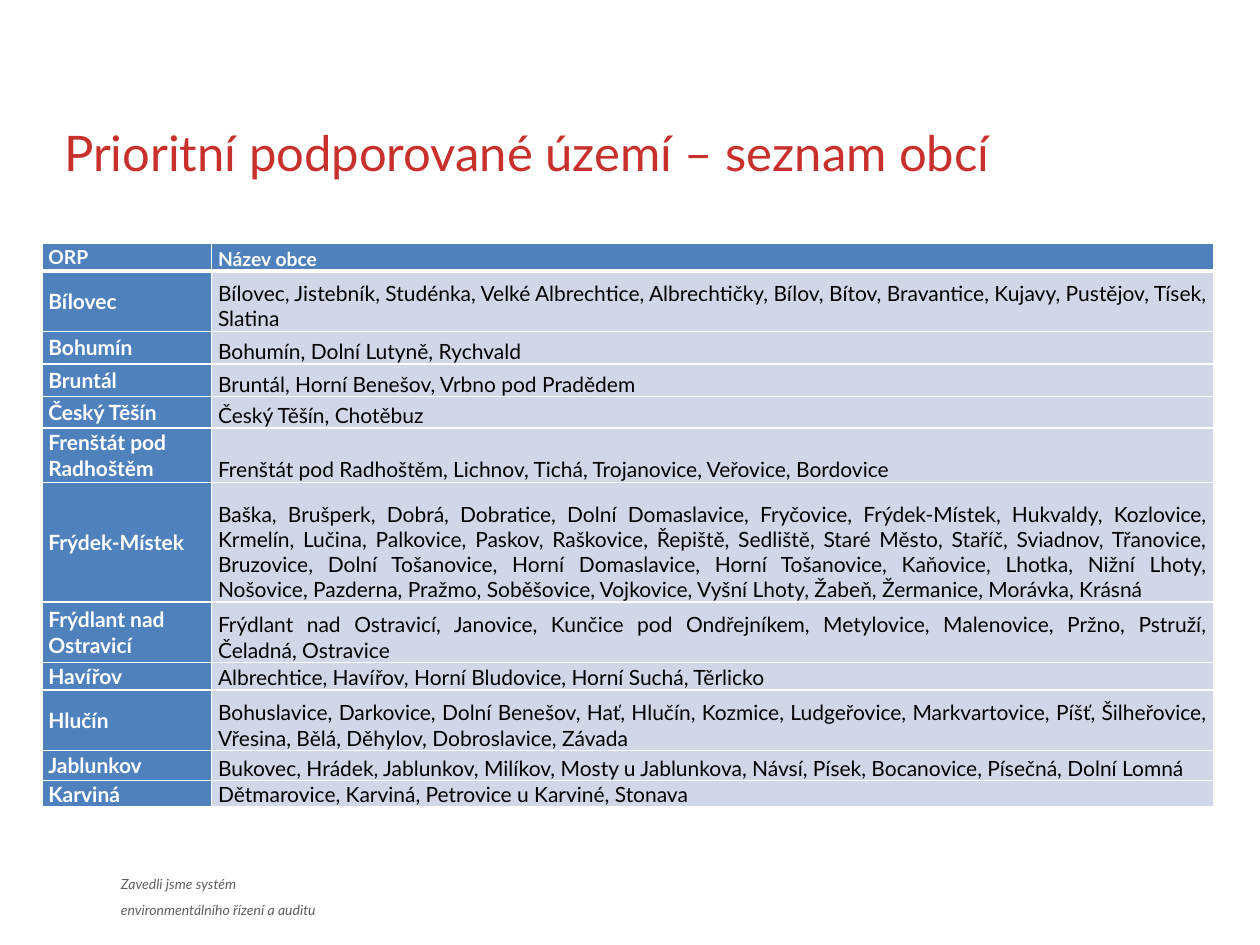
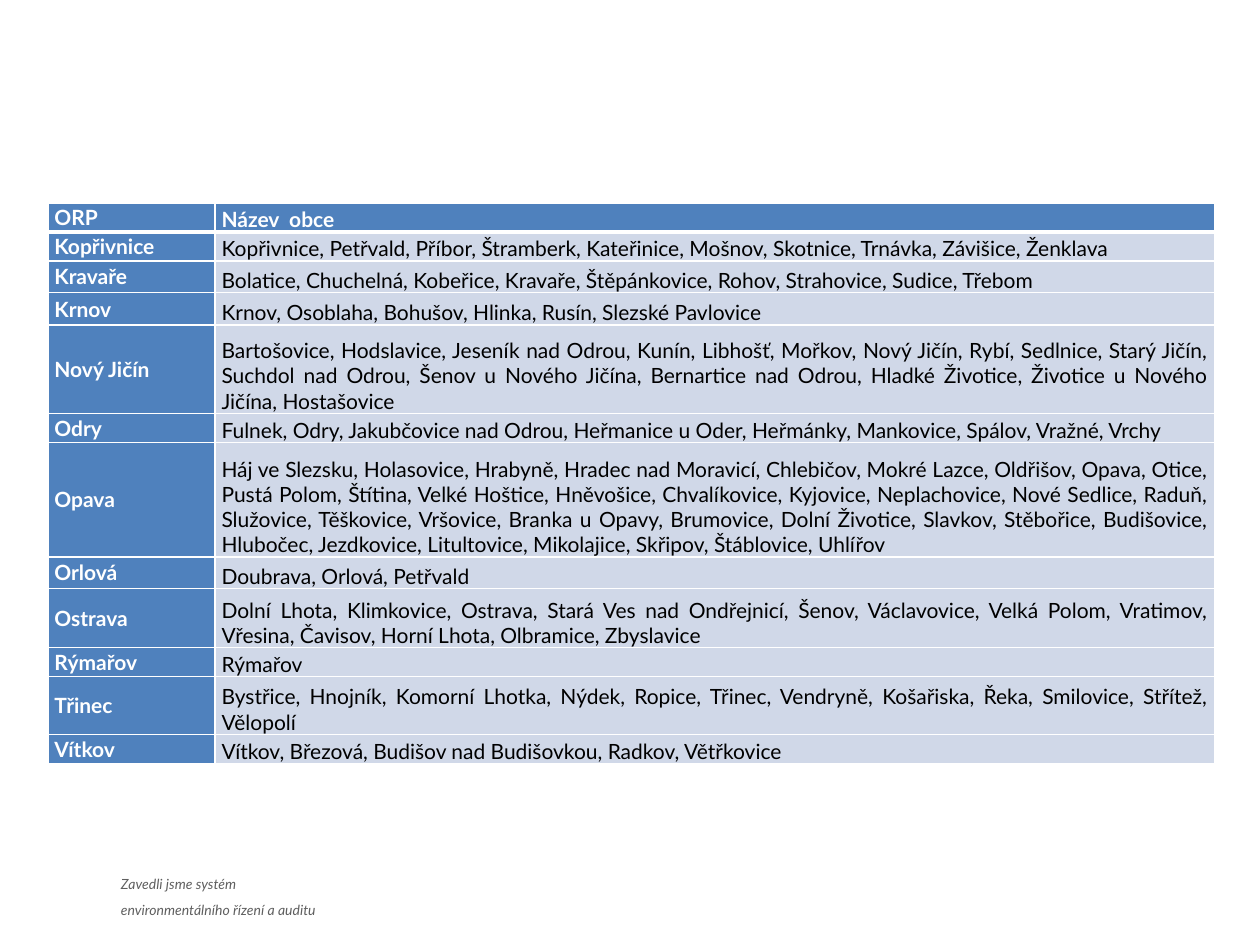
from lxml import etree
from pptx import Presentation
from pptx.dml.color import RGBColor
from pptx.enum.text import MSO_ANCHOR as ANCHOR, PP_ALIGN as ALIGN
from pptx.oxml.ns import qn
from pptx.util import Pt

FONT = "Lato"
RED, BLUE, PALE = "C8302C", "4F81BD", "D0D8E8"
WHITE, BLACK, GREY = "FFFFFF", "000000", "5F5F5F"
FOOTER = ["Zavedli jsme systém", "environmentálního řízení a auditu"]

# Each row: height, district, municipalities
DISTRICTS_B_K = [
    (34.5, "Bílovec",
     "Bílovec, Jistebník, Studénka, Velké Albrechtice, Albrechtičky, Bílov, Bítov, "
     "Bravantice, Kujavy, Pustějov, Tísek, Slatina"),
    (18.7, "Bohumín", "Bohumín, Dolní Lutyně, Rychvald"),
    (18.7, "Bruntál", "Bruntál, Horní Benešov, Vrbno pod Pradědem"),
    (18, "Český Těšín", "Český Těšín, Chotěbuz"),
    (31, "Frenštát pod Radhoštěm",
     "Frenštát pod Radhoštěm, Lichnov, Tichá, Trojanovice, Veřovice, Bordovice"),
    (68.4, "Frýdek-Místek",
     "Baška, Brušperk, Dobrá, Dobratice, Dolní Domaslavice, Fryčovice, Frýdek-Místek, "
     "Hukvaldy, Kozlovice, Krmelín, Lučina, Palkovice, Paskov, Raškovice, Řepiště, "
     "Sedliště, Staré Město, Staříč, Sviadnov, Třanovice, Bruzovice, Dolní Tošanovice, "
     "Horní Domaslavice, Horní Tošanovice, Kaňovice, Lhotka, Nižní Lhoty, Nošovice, "
     "Pazderna, Pražmo, Soběšovice, Vojkovice, Vyšní Lhoty, Žabeň, Žermanice, Morávka, "
     "Krásná"),
    (34.5, "Frýdlant nad Ostravicí",
     "Frýdlant nad Ostravicí, Janovice, Kunčice pod Ondřejníkem, Metylovice, Malenovice, "
     "Pržno, Pstruží, Čeladná, Ostravice"),
    (15.8, "Havířov", "Albrechtice, Havířov, Horní Bludovice, Horní Suchá, Těrlicko"),
    (34.5, "Hlučín",
     "Bohuslavice, Darkovice, Dolní Benešov, Hať, Hlučín, Kozmice, Ludgeřovice, "
     "Markvartovice, Píšť, Šilheřovice, Vřesina, Bělá, Děhylov, Dobroslavice, Závada"),
    (17.3, "Jablunkov",
     "Bukovec, Hrádek, Jablunkov, Milíkov, Mosty u Jablunkova, Návsí, Písek, Bocanovice, "
     "Písečná, Dolní Lomná"),
    (15.1, "Karviná", "Dětmarovice, Karviná, Petrovice u Karviné, Stonava"),
]
DISTRICTS_K_V = [
    (16.6, "Kopřivnice",
     "Kopřivnice, Petřvald, Příbor, Štramberk, Kateřinice, Mošnov, Skotnice, Trnávka, "
     "Závišice, Ženklava"),
    (18, "Kravaře",
     "Bolatice, Chuchelná, Kobeřice, Kravaře, Štěpánkovice, Rohov, Strahovice, Sudice, "
     "Třebom"),
    (18.7, "Krnov", "Krnov, Osoblaha, Bohušov, Hlinka, Rusín, Slezské Pavlovice"),
    (50.4, "Nový Jičín",
     "Bartošovice, Hodslavice, Jeseník nad Odrou, Kunín, Libhošť, Mořkov, Nový Jičín, "
     "Rybí, Sedlnice, Starý Jičín, Suchdol nad Odrou, Šenov u Nového Jičína, Bernartice "
     "nad Odrou, Hladké Životice, Životice u Nového Jičína, Hostašovice"),
    (16.6, "Odry",
     "Fulnek, Odry, Jakubčovice nad Odrou, Heřmanice u Oder, Heřmánky, Mankovice, "
     "Spálov, Vražné, Vrchy"),
    (65.5, "Opava",
     "Háj ve Slezsku, Holasovice, Hrabyně, Hradec nad Moravicí, Chlebičov, Mokré Lazce, "
     "Oldřišov, Opava, Otice, Pustá Polom, Štítina, Velké Hoštice, Hněvošice, "
     "Chvalíkovice, Kyjovice, Neplachovice, Nové Sedlice, Raduň, Služovice, Těškovice, "
     "Vršovice, Branka u Opavy, Brumovice, Dolní Životice, Slavkov, Stěbořice, "
     "Budišovice, Hlubočec, Jezdkovice, Litultovice, Mikolajice, Skřipov, Štáblovice, "
     "Uhlířov"),
    (18, "Orlová", "Doubrava, Orlová, Petřvald"),
    (33.8, "Ostrava",
     "Dolní Lhota, Klimkovice, Ostrava, Stará Ves nad Ondřejnicí, Šenov, Václavovice, "
     "Velká Polom, Vratimov, Vřesina, Čavisov, Horní Lhota, Olbramice, Zbyslavice"),
    (16.6, "Rýmařov", "Rýmařov"),
    (33.1, "Třinec",
     "Bystřice, Hnojník, Komorní Lhotka, Nýdek, Ropice, Třinec, Vendryně, Košařiska, "
     "Řeka, Smilovice, Střítež, Vělopolí"),
    (16.6, "Vítkov", "Vítkov, Březová, Budišov nad Budišovkou, Radkov, Větřkovice"),
]


def rgb(value):
    return RGBColor.from_string(value)


def add_run(p, text, size, color, bold=False, italic=False):
    r = p.add_run()
    r.text = text
    r.font.name, r.font.size = FONT, Pt(size)
    r.font.bold, r.font.italic = bold, italic
    r.font.color.rgb = rgb(color)


def add_title(slide, text):
    sp = slide.shapes.title
    sp.left, sp.top, sp.width, sp.height = Pt(29.5), Pt(65), Pt(665), Pt(44)
    tf = sp.text_frame
    tf.vertical_anchor = ANCHOR.MIDDLE
    p = tf.paragraphs[0]
    p.alignment = ALIGN.LEFT
    add_run(p, text, 28, RED)


def add_footer(slide):
    tf = slide.shapes.add_textbox(Pt(62), Pt(495.4), Pt(136), Pt(29.5)).text_frame
    tf.word_wrap = True
    for i, line in enumerate(FOOTER):
        p = tf.add_paragraph() if i else tf.paragraphs[0]
        p.alignment, p.line_spacing = ALIGN.JUSTIFY, 1.15
        p.space_before = Pt(4 if i else 0)
        add_run(p, line, 8, GREY, italic=True)


def set_borders(cell, top, bottom):
    tc_pr = cell._tc.get_or_add_tcPr()
    for side, width in (("L", 1), ("R", 1), ("T", top), ("B", bottom)):
        ln = etree.SubElement(tc_pr, qn(f"a:ln{side}"), w=str(Pt(width)))
        fill = etree.SubElement(ln, qn("a:solidFill"))
        etree.SubElement(fill, qn("a:srgbClr"), val=WHITE)


def fill_cell(cell, text, size, is_header, is_label):
    strong = is_header or is_label
    cell.margin_left = cell.margin_right = Pt(3.6)
    cell.margin_top = cell.margin_bottom = 0
    cell.vertical_anchor = ANCHOR.MIDDLE if is_label else ANCHOR.BOTTOM
    cell.fill.solid()
    cell.fill.fore_color.rgb = rgb(BLUE if strong else PALE)
    p = cell.text_frame.paragraphs[0]
    p.alignment = ALIGN.LEFT if is_label else ALIGN.JUSTIFY
    p.space_after = Pt(0.8)
    add_run(p, text, size, WHITE if strong else BLACK, bold=strong)


def add_district_table(slide, left, top, widths, header, header_size, districts):
    rows = [header] + districts
    height = sum(row[0] for row in rows)
    table = slide.shapes.add_table(len(rows), 2, Pt(left), Pt(top),
                                   Pt(sum(widths)), Pt(height)).table
    table.horz_banding = False
    for column, width in zip(table.columns, widths):
        column.width = Pt(width)
    for i, (row_height, *texts) in enumerate(rows):
        table.rows[i].height = Pt(row_height)
        for j, text in enumerate(texts):
            cell = table.cell(i, j)
            # A thick rule separates the header from the districts
            set_borders(cell, 3 if i == 1 else 1, 3 if i == 0 else 1)
            fill_cell(cell, text, 12 if i else header_size, i == 0, j == 0)


def main():
    prs = Presentation()
    prs.slide_width, prs.slide_height = Pt(720), Pt(540)

    # Slide 1: title and first half of the list
    slide = prs.slides.add_slide(prs.slide_layouts[5])
    add_footer(slide)
    add_district_table(slide, 24, 139, (97, 572.5), (15.8, "ORP", "Název obce"), 11,
                       DISTRICTS_B_K)
    add_title(slide, "Prioritní podporované území – seznam obcí")

    # Slide 2: second half of the list
    slide = prs.slides.add_slide(prs.slide_layouts[6])
    add_footer(slide)
    add_district_table(slide, 27.5, 116, (95.5, 571), (16.6, "ORP", "Název  obce"), 12,
                       DISTRICTS_K_V)

    prs.save("out.pptx")


if __name__ == "__main__":
    main()
